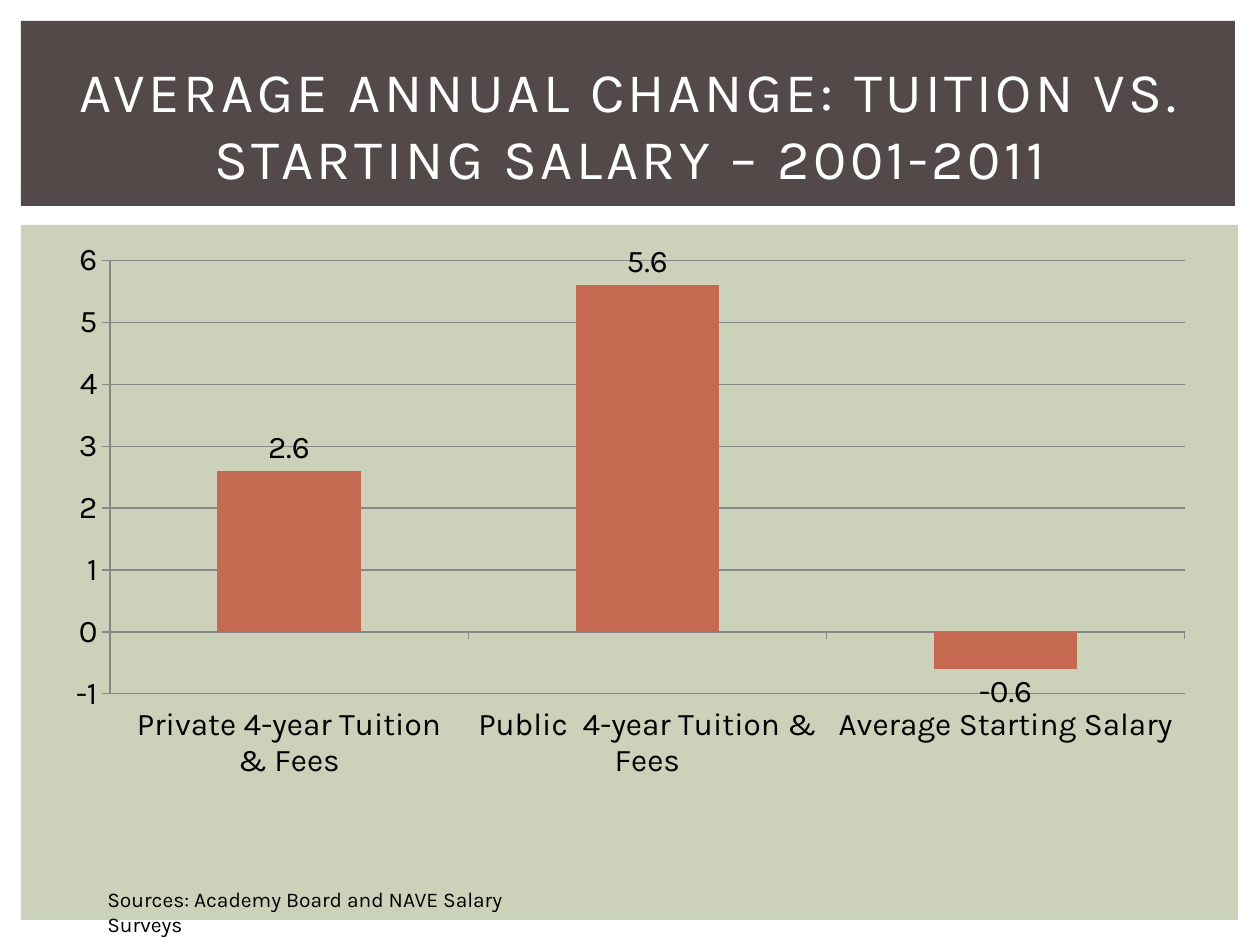
"""Build a slide comparing yearly tuition growth with starting salary growth."""
import pptx
import pptx.chart.data
import pptx.dml.color
import pptx.enum.chart
import pptx.enum.shapes
import pptx.enum.text
import pptx.util

PX = 914400 / 126
FONT = "Karla"
COLORS = {"panel": "CCD1B9", "band": "534949", "bar": "C66951",
          "grid": "888888", "text": "000000", "title": "FFFFFF"}


def px(*values):
    return [pptx.util.Emu(round(v * PX)) for v in values]


def write(sp, text, size, color, align="LEFT", anchor="TOP", spacing=0):
    tf = sp.text_frame
    tf.word_wrap = True
    tf.auto_size = pptx.enum.text.MSO_AUTO_SIZE.NONE
    tf.vertical_anchor = pptx.enum.text.MSO_ANCHOR[anchor]
    p = tf.paragraphs[0]
    p.alignment = pptx.enum.text.PP_ALIGN[align]
    r = p.add_run()
    r.text = text
    r.font.name = FONT
    r.font.size = pptx.util.Pt(size)
    r.font.color.rgb = rgb[color]
    if spacing:
        r.font._element.set("spc", str(spacing * 100))


rgb = {k: pptx.dml.color.RGBColor.from_string(v) for k, v in COLORS.items()}

prs = pptx.Presentation()
prs.slide_width, prs.slide_height = px(1260, 945)
s = prs.slides.add_slide(prs.slide_layouts[5])

for name, box in (("panel", (21, 225, 1217, 695)), ("band", (21, 21, 1214, 185))):
    sp = s.shapes.add_shape(pptx.enum.shapes.MSO_SHAPE.RECTANGLE, *px(*box))
    sp.shadow.inherit = False
    sp.fill.solid()
    sp.fill.fore_color.rgb = rgb[name]
    sp.line.fill.background()

data = pptx.chart.data.CategoryChartData()
data.categories = ["Private 4-year Tuition & Fees",
                   "Public  4-year Tuition & Fees",
                   "Average Starting Salary"]
data.add_series("Series 1", (2.6, 5.6, -0.6))
chart = s.shapes.add_chart(pptx.enum.chart.XL_CHART_TYPE.COLUMN_CLUSTERED,
                           *px(53, 231, 1155, 560), data).chart
chart.has_legend = False
chart.has_title = False
chart.font.name = FONT
chart.font.size = pptx.util.Pt(18)
chart.font.color.rgb = rgb["text"]

cat, val = chart.category_axis, chart.value_axis
cat.tick_label_position = pptx.enum.chart.XL_TICK_LABEL_POSITION.LOW
val.minimum_scale, val.maximum_scale, val.major_unit = -1, 6, 1
val.has_major_gridlines = True
for axis in (cat, val):
    axis.major_tick_mark = pptx.enum.chart.XL_TICK_MARK.OUTSIDE
for line in (cat.format.line, val.format.line, val.major_gridlines.format.line):
    line.color.rgb = rgb["grid"]
    line.width = pptx.util.Pt(0.75)

plot = chart.plots[0]
plot.gap_width = 150
plot.vary_by_categories = False
plot.has_data_labels = True
plot.data_labels.show_value = True
plot.data_labels.position = pptx.enum.chart.XL_LABEL_POSITION.OUTSIDE_END
bars = plot.series[0]
bars.invert_if_negative = False
bars.format.fill.solid()
bars.format.fill.fore_color.rgb = rgb["bar"]

title = s.shapes.title
title.left, title.top, title.width, title.height = px(53, 32, 1155, 183)
write(title, "AVERAGE ANNUAL CHANGE: TUITION VS. STARTING SALARY – 2001-2011",
      32, "title", align="CENTER", anchor="MIDDLE", spacing=2)
s.shapes._spTree.append(title._element)

source = s.shapes.add_textbox(*px(95, 880, 467, 38))
write(source, "Sources: Academy Board and NAVE Salary Surveys", 12, "text")

prs.save("out.pptx")
